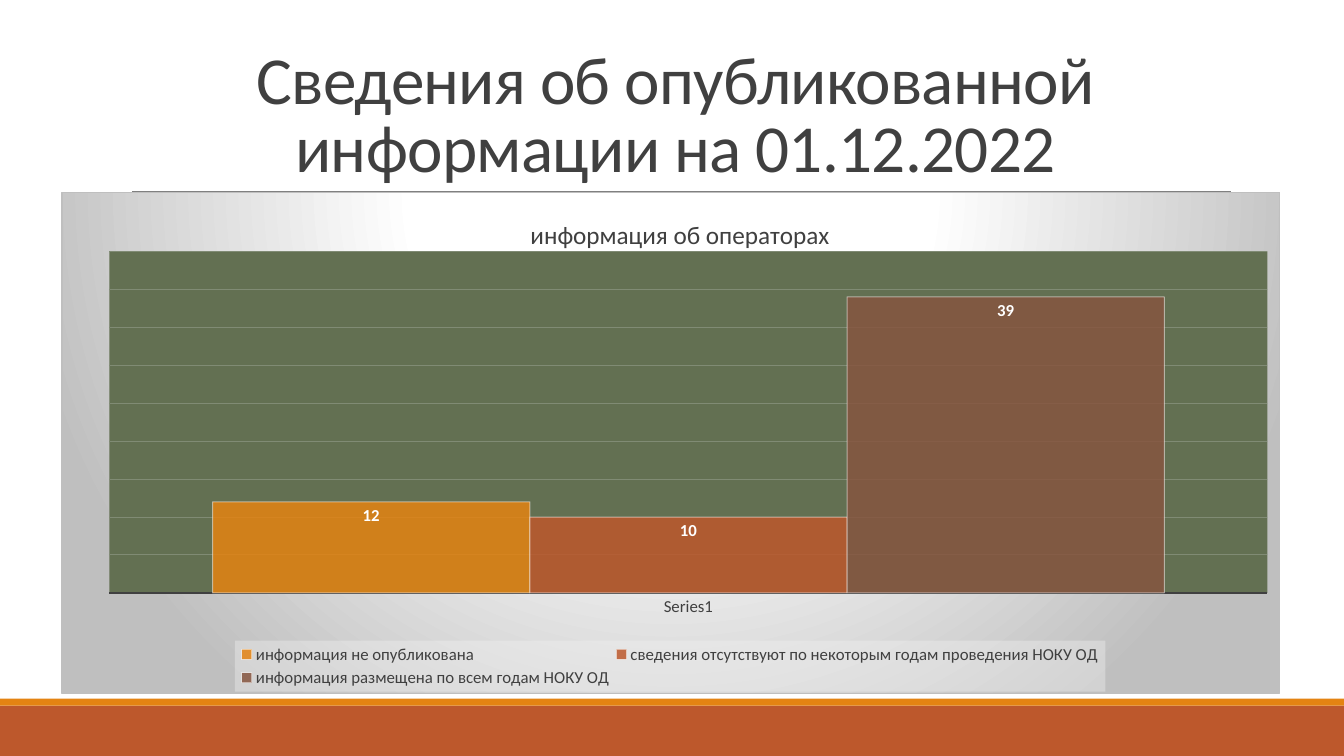
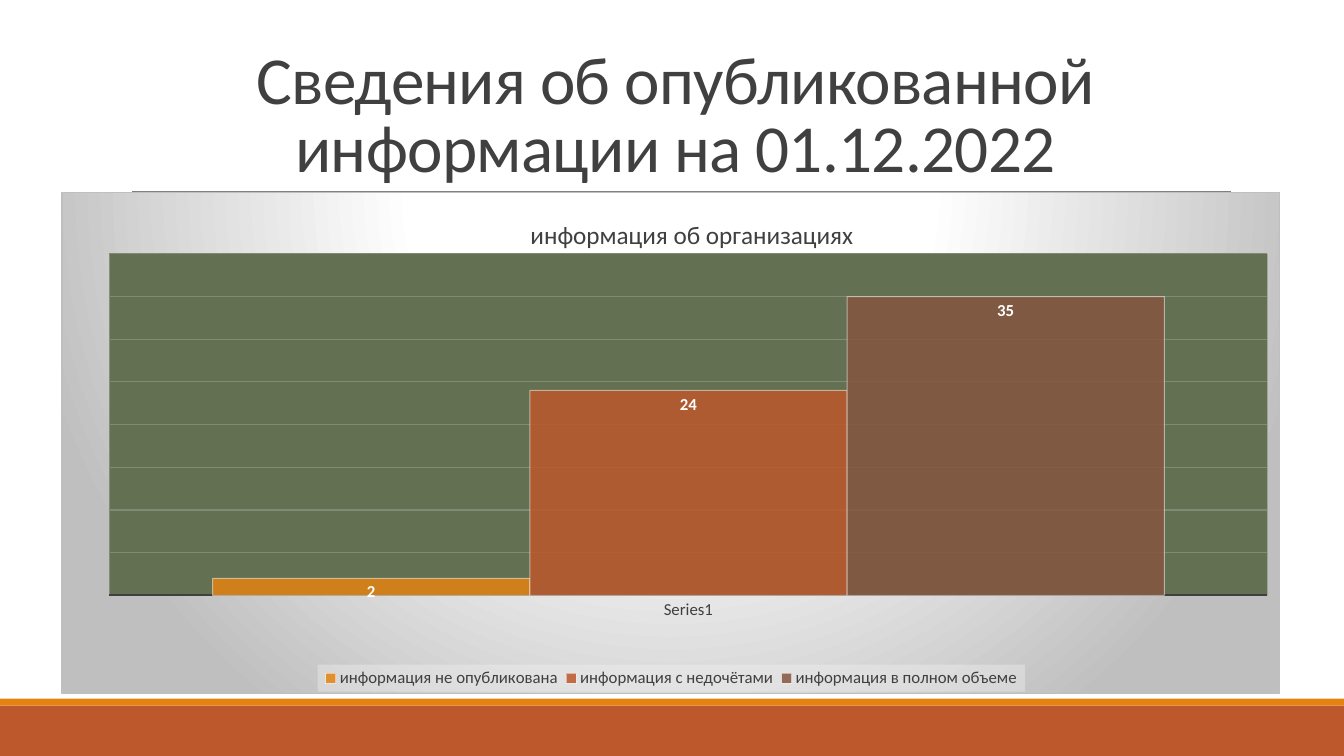
from lxml import etree
from pptx import Presentation
from pptx.chart.data import CategoryChartData
from pptx.dml.color import RGBColor
from pptx.enum import chart as ch, shapes, text
from pptx.oxml import parse_xml
from pptx.oxml.ns import nsdecls, qn
from pptx.util import Pt

FONT = "Calibri"
INK, WHITE, SILVER = "404040", "FFFFFF", "BFBFBF"
ORANGE, RUST, BROWN = "E48312", "BD582C", "865640"
PLOT_GREEN, GRID, RULE = "637052", "808B74", "808080"
WIDTH, HEIGHT = 960, 540
TITLE_BOX = (86.4, 22.3, 792, 114.5)
CHART_BOX = (43.9, 137, 870.5, 358.5)
HEADING = "Сведения об опубликованной информации на 01.12.2022"
REPORTS = [
    {
        "caption": "информация об операторах",
        "counts": {
            "информация не опубликована": 12,
            "сведения отсутствуют по некоторым годам проведения НОКУ ОД": 10,
            "информация размещена по всем годам НОКУ ОД": 39,
        },
        "axis_max": 45,
        "plot_top": 0.118,
        "legend_box": (0.142, 0.895, 0.715, 0.102),
    },
    {
        "caption": "информация об организациях",
        "counts": {
            "информация не опубликована": 2,
            "информация с недочётами": 24,
            "информация в полном объеме": 35,
        },
        "axis_max": 40,
        "plot_top": 0.123,
        "legend_box": (0.21, 0.943, 0.581, 0.054),
    },
]


def rgb(value):
    """Turn a hex string into a colour."""
    return RGBColor.from_string(value)


def style_font(font, size, color=INK, bold=False):
    """Give a font the deck's face with a size and colour."""
    font.name, font.size, font.bold = FONT, Pt(size), bold
    font.color.rgb = rgb(color)


def style_line(line, color, width):
    """Set a solid line colour and width."""
    line.fill.solid()
    line.fill.fore_color.rgb = rgb(color)
    line.width = Pt(width)


def solid_xml(color, alpha=100):
    """Return a solid fill as XML text."""
    return (f'<a:solidFill><a:srgbClr val="{color}">'
            f'<a:alpha val="{alpha * 1000}"/></a:srgbClr></a:solidFill>')


def chart_part_format(fill, line="<a:ln><a:noFill/></a:ln>"):
    """Build the shape properties of a chart part."""
    return parse_xml(f'<c:spPr {nsdecls("c", "a")}>{fill}{line}</c:spPr>')


def place_chart_part(part, index, target=None, **fractions):
    """Fix a chart part at fractions of the chart's size."""
    layout = part.find(qn("c:layout"))
    if layout is None:
        layout = etree.Element(qn("c:layout"))
        part.insert(index, layout)
    manual = etree.SubElement(layout, qn("c:manualLayout"))
    settings = {"layoutTarget": target} if target else {}
    settings.update(xMode="edge", yMode="edge", **fractions)
    for name, value in settings.items():
        etree.SubElement(manual, qn(f"c:{name}")).set("val", str(value))


def add_band(slide, top, height, color):
    """Add a full-width footer band."""
    band = slide.shapes.add_shape(
        shapes.MSO_SHAPE.RECTANGLE, 0, Pt(top), Pt(WIDTH), Pt(height))
    band.shadow.inherit = False
    band.fill.solid()
    band.fill.fore_color.rgb = rgb(color)
    band.line.fill.background()


def add_frame(slide):
    """Add the footer bands and the rule under the title."""
    add_band(slide, 504, 36, RUST)
    add_band(slide, 499, 5, ORANGE)
    rule = slide.shapes.add_connector(
        shapes.MSO_CONNECTOR.STRAIGHT, Pt(94.3), Pt(136.8), Pt(879), Pt(136.8))
    style_line(rule.line, RULE, 0.5)
    etree.SubElement(rule._element.spPr, qn("a:effectLst"))


def add_heading(slide, box, wording):
    """Add the slide title, resting on the bottom of its box."""
    frame = slide.shapes.add_textbox(*map(Pt, box)).text_frame
    frame.word_wrap = True
    frame.vertical_anchor = text.MSO_ANCHOR.BOTTOM
    heading = frame.paragraphs[0]
    heading.text = wording
    heading.alignment = text.PP_ALIGN.CENTER
    heading.line_spacing = 0.85
    style_font(heading.font, 48)
    heading.runs[0].font._element.set("spc", "-50")


def style_axes(chart, maximum):
    """Style the category axis and keep only gridlines of the value axis."""
    category = chart.category_axis
    category.major_tick_mark = ch.XL_TICK_MARK.NONE
    style_font(category.tick_labels.font, 12)
    style_line(category.format.line, INK, 1.5)
    value = chart.value_axis
    value.minimum_scale, value.maximum_scale, value.major_unit = 0, maximum, 5
    value.has_major_gridlines = True
    style_line(value.major_gridlines.format.line, GRID, 0.75)
    value.visible = False


def style_columns(plot):
    """Colour the columns and label them inside their tops."""
    plot.gap_width, plot.overlap, plot.vary_by_categories = 65, 0, False
    outline = f'<a:ln w="9525">{solid_xml(WHITE, 50)}</a:ln>'
    for column, color in zip(plot.series, (ORANGE, RUST, BROWN)):
        column.invert_if_negative = False
        old = column.format._element.get_or_add_spPr()
        old.getparent().replace(
            old, chart_part_format(solid_xml(color, 85), outline))
        labels = column.data_labels
        labels.show_value = True
        labels.position = ch.XL_LABEL_POSITION.INSIDE_END
        style_font(labels.font, 12, WHITE, True)


def add_caption(chart, wording):
    """Add the chart's title."""
    caption = chart.chart_title
    paragraph = caption.text_frame.paragraphs[0]
    paragraph.text = wording
    style_font(paragraph.font, 18)
    caption.include_in_layout = False
    place_chart_part(caption._element, 1, x=0.381, y=0.04)


def add_legend(chart, box):
    """Add the legend on a pale translucent panel."""
    chart.has_legend = True
    legend = chart.legend
    legend.position = ch.XL_LEGEND_POSITION.BOTTOM
    legend.include_in_layout = False
    style_font(legend.font, 12)
    element = legend._element
    place_chart_part(element, 1, **dict(zip("xywh", box)))
    element.find(qn("c:overlay")).addnext(
        chart_part_format(solid_xml("F2F2F2", 39)))


def add_backgrounds(chart, plot_top):
    """Fill the chart and plot areas and place the plot."""
    space = chart._chartSpace
    corners = etree.Element(qn("c:roundedCorners"))
    corners.set("val", "0")
    space.find(qn("c:date1904")).addnext(corners)
    stops = "".join(
        f'<a:gs pos="{at * 1000}"><a:srgbClr val="{color}"/></a:gs>'
        for at, color in ((0, WHITE), (39, WHITE), (100, SILVER)))
    glow = (f'<a:gradFill><a:gsLst>{stops}</a:gsLst><a:path path="circle">'
            '<a:fillToRect l="50000" t="-80000" r="50000" b="180000"/>'
            '</a:path></a:gradFill>')
    border = f'<a:ln w="9525">{solid_xml(SILVER)}</a:ln>'
    area = space.find(qn("c:chart"))
    area.addnext(chart_part_format(glow, border))
    plot_area = area.find(qn("c:plotArea"))
    place_chart_part(plot_area, 0, "inner",
                     x=0.039, y=plot_top, w=0.951, h=0.682)
    plot_area.append(chart_part_format(solid_xml(PLOT_GREEN)))


def add_count_chart(slide, box, report):
    """Add the column chart of one report."""
    data = CategoryChartData()
    data.categories = ["Series1"]
    for name, count in report["counts"].items():
        data.add_series(name, [count])
    chart = slide.shapes.add_chart(
        ch.XL_CHART_TYPE.COLUMN_CLUSTERED, *map(Pt, box), data).chart
    style_font(chart.font, 10, "000000")
    style_axes(chart, report["axis_max"])
    style_columns(chart.plots[0])
    add_caption(chart, report["caption"])
    add_legend(chart, report["legend_box"])
    add_backgrounds(chart, report["plot_top"])


def add_report_slide(deck, report):
    """Add one slide with the shared frame, title and its chart."""
    slide = deck.slides.add_slide(deck.slide_layouts[6])
    add_frame(slide)
    add_heading(slide, TITLE_BOX, HEADING)
    add_count_chart(slide, CHART_BOX, report)


def main():
    """Build and save the deck."""
    deck = Presentation()
    deck.slide_width, deck.slide_height = Pt(WIDTH), Pt(HEIGHT)
    for report in REPORTS:
        add_report_slide(deck, report)
    deck.save("out.pptx")


if __name__ == "__main__":
    main()
